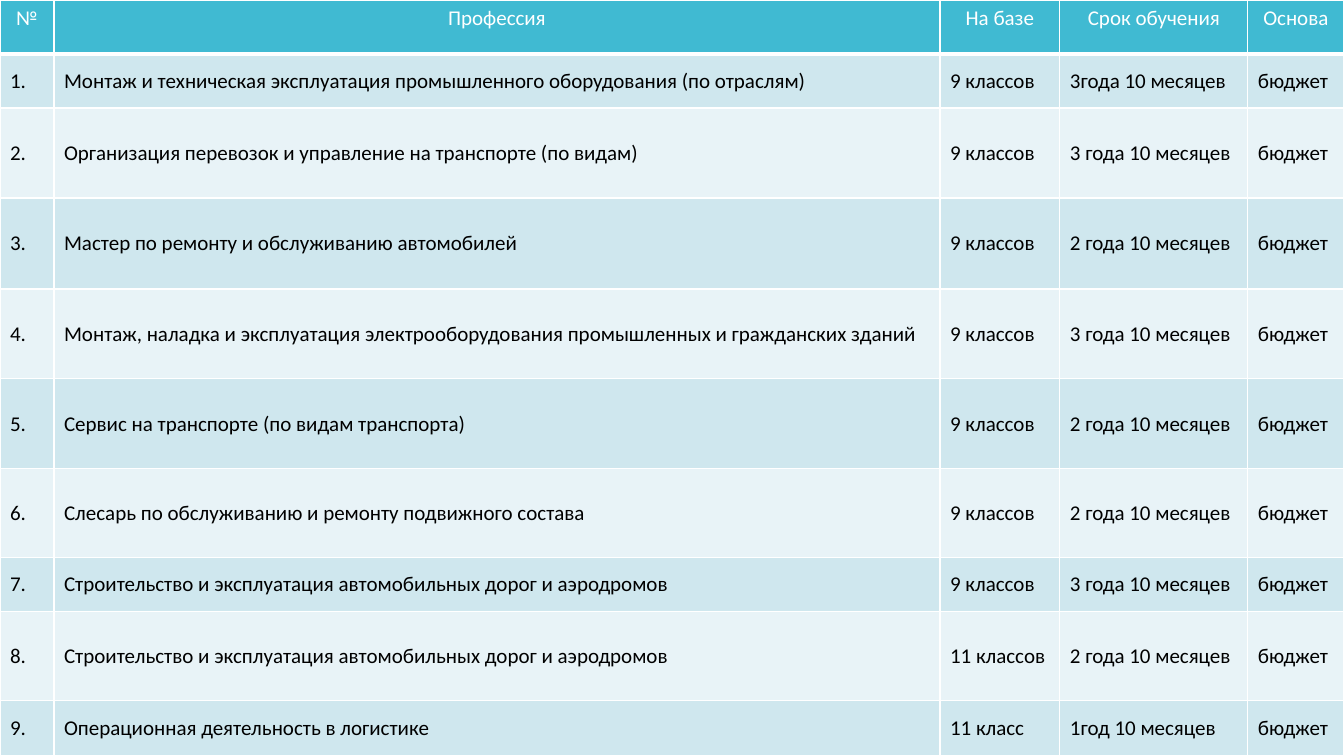
from pptx import Presentation
from pptx.dml.color import RGBColor
from pptx.enum.text import MSO_ANCHOR, PP_ALIGN
from pptx.oxml.ns import qn
from pptx.util import Pt
from lxml.etree import SubElement

HEAD = ("№", "Профессия", "На базе", "Срок обучения", "Основа")
JOBS = [
    ("Монтаж и техническая эксплуатация промышленного оборудования (по отраслям)",
     "9 классов", "3года 10 месяцев"),
    ("Организация перевозок и управление на транспорте (по видам)",
     "9 классов", "3 года 10 месяцев"),
    ("Мастер по ремонту и обслуживанию автомобилей",
     "9 классов", "2 года 10 месяцев"),
    ("Монтаж, наладка и эксплуатация электрооборудования промышленных и гражданских зданий",
     "9 классов", "3 года 10 месяцев"),
    ("Сервис на транспорте (по видам транспорта)",
     "9 классов", "2 года 10 месяцев"),
    ("Слесарь по обслуживанию и ремонту подвижного состава",
     "9 классов", "2 года 10 месяцев"),
    ("Строительство и эксплуатация автомобильных дорог и аэродромов",
     "9 классов", "3 года 10 месяцев"),
    ("Строительство и эксплуатация автомобильных дорог и аэродромов",
     "11 классов", "2 года 10 месяцев"),
    ("Операционная деятельность в логистике",
     "11 класс", "1год 10 месяцев"),
]
FUND = "бюджет"

COLS = (54, 886, 120, 188, 96)
ROWS = (54, 54, 90, 91, 90, 90, 89, 54, 89, 55)

WHITE = RGBColor(0xFF, 0xFF, 0xFF)
BLACK = RGBColor(0, 0, 0)
TEAL = RGBColor(0x40, 0xBA, 0xD2)
BANDS = (RGBColor(0xCF, 0xE7, 0xEE), RGBColor(0xE8, 0xF3, 0xF7))


def px(n):
    return round(n * 914400 / 100.8)


def write(cell, text, color=BLACK, align=PP_ALIGN.LEFT, anchor=MSO_ANCHOR.MIDDLE):
    cell.vertical_anchor = anchor
    para = cell.text_frame.paragraphs[0]
    para.alignment = align
    run = para.add_run()
    run.text = text
    font = run.font
    font.name, font.size, font.bold = "Calibri", Pt(15), False
    font.color.rgb = color


def paint(cell, color, base=1):
    """Set white borders, the bottom one base points wide, then the fill."""
    props = cell._tc.get_or_add_tcPr()
    for side, width in (("L", 1), ("R", 1), ("T", 1), ("B", base)):
        line = SubElement(props, qn(f"a:ln{side}"), w=str(Pt(width)))
        fill = SubElement(line, qn("a:solidFill"))
        SubElement(fill, qn("a:srgbClr"), val=str(WHITE))
    cell.fill.solid()
    cell.fill.fore_color.rgb = color


def main():
    deck = Presentation()
    deck.slide_width, deck.slide_height = px(sum(COLS)), px(sum(ROWS))
    slide = deck.slides.add_slide(deck.slide_layouts[6])
    table = slide.shapes.add_table(len(ROWS), len(COLS), 0, 0,
                                   deck.slide_width, deck.slide_height).table
    for col, width in zip(table.columns, COLS):
        col.width = px(width)
    for row, height in zip(table.rows, ROWS):
        row.height = px(height)

    for cell, text in zip(table.rows[0].cells, HEAD):
        paint(cell, TEAL, base=3)
        write(cell, text, color=WHITE, align=PP_ALIGN.CENTER, anchor=MSO_ANCHOR.TOP)
    for num, job in enumerate(JOBS, 1):
        for cell, text in zip(table.rows[num].cells, (f"{num}.", *job, FUND)):
            paint(cell, BANDS[(num - 1) % 2])
            write(cell, text)
    deck.save("out.pptx")


if __name__ == "__main__":
    main()
